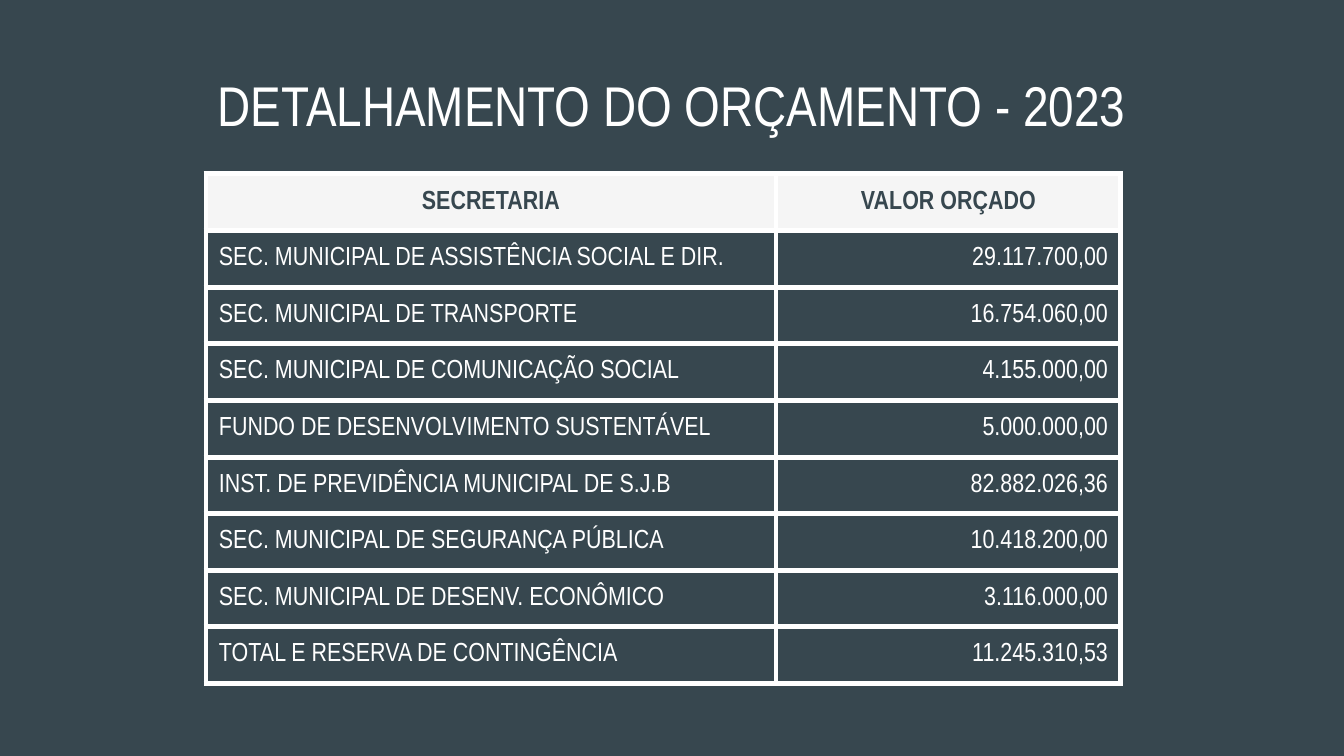
from lxml import etree
from pptx import Presentation
from pptx.dml.color import RGBColor
from pptx.enum.text import MSO_ANCHOR, PP_ALIGN
from pptx.oxml.ns import qn
from pptx.util import Pt

LEFT, CENTER, RIGHT = PP_ALIGN.LEFT, PP_ALIGN.CENTER, PP_ALIGN.RIGHT
TOP, MIDDLE = MSO_ANCHOR.TOP, MSO_ANCHOR.MIDDLE

TITLE = "DETALHAMENTO DO ORÇAMENTO - 2023"
HEADER = ("SECRETARIA", "VALOR ORÇADO")
BUDGET = [
    ("SEC. MUNICIPAL DE ASSISTÊNCIA SOCIAL E DIR.", "29.117.700,00"),
    ("SEC. MUNICIPAL DE TRANSPORTE", "16.754.060,00"),
    ("SEC. MUNICIPAL DE COMUNICAÇÃO SOCIAL", "4.155.000,00"),
    ("FUNDO DE DESENVOLVIMENTO SUSTENTÁVEL", "5.000.000,00"),
    ("INST. DE PREVIDÊNCIA MUNICIPAL DE S.J.B", "82.882.026,36"),
    ("SEC. MUNICIPAL DE SEGURANÇA PÚBLICA", "10.418.200,00"),
    ("SEC. MUNICIPAL DE DESENV. ECONÔMICO", "3.116.000,00"),
    ("TOTAL E RESERVA DE CONTINGÊNCIA", "11.245.310,53"),
]
COLORS = {"slate": "37474F", "white": "FFFFFF", "header": "F5F5F5"}
FONT = "Arial Narrow"
SLIDE_SIZE = (1344, 756)
TITLE_BOX = (46, 58, 1252, 85)
TABLE_BOX = (206, 174, 915, 510)
COLUMN_WIDTHS = (570, 345)
BORDER = Pt(3)


def px(length):
    return round(length * 914400 / 134.4)


def color(name):
    return RGBColor.from_string(COLORS[name])


def write(frame, text, size, ink, align, bold=False):
    para = frame.paragraphs[0]
    para.alignment = align
    span = para.add_run()
    span.text = text
    span.font.name = FONT
    span.font.size = Pt(size)
    span.font.bold = bold
    span.font.color.rgb = color(ink)


def add_borders(cell):
    properties = cell._tc.get_or_add_tcPr()
    for index, side in enumerate(("a:lnL", "a:lnR", "a:lnT", "a:lnB")):
        line = etree.Element(qn(side), w=str(BORDER))
        fill = etree.SubElement(line, qn("a:solidFill"))
        etree.SubElement(fill, qn("a:srgbClr"), val=COLORS["white"])
        properties.insert(index, line)


def add_title(slide):
    title = slide.shapes.title
    title.left, title.top, title.width, title.height = map(px, TITLE_BOX)
    frame = title.text_frame
    frame.vertical_anchor = TOP
    frame.margin_left = frame.margin_right = px(13)
    frame.margin_top = frame.margin_bottom = px(13)
    write(frame, TITLE, 30, "white", CENTER)


def add_budget_table(slide):
    rows = [HEADER] + BUDGET
    table = slide.shapes.add_table(len(rows), len(HEADER), *map(px, TABLE_BOX)).table
    table.horz_banding = False
    for column, width in zip(table.columns, COLUMN_WIDTHS):
        column.width = px(width)
    for r, values in enumerate(rows):
        table.rows[r].height = px(TABLE_BOX[3] / len(rows))
        for c, value in enumerate(values):
            cell = table.cell(r, c)
            cell.vertical_anchor = MIDDLE
            cell.margin_left = cell.margin_right = px(13)
            cell.margin_top = cell.margin_bottom = px(13)
            if r == 0:
                cell.fill.solid()
                cell.fill.fore_color.rgb = color("header")
                write(cell.text_frame, value, 14, "slate", CENTER, bold=True)
            else:
                cell.fill.background()
                write(cell.text_frame, value, 14, "white", (LEFT, RIGHT)[c])
            add_borders(cell)


def main():
    deck = Presentation()
    deck.slide_width, deck.slide_height = map(px, SLIDE_SIZE)
    slide = deck.slides.add_slide(deck.slide_layouts[5])
    slide.background.fill.solid()
    slide.background.fill.fore_color.rgb = color("slate")
    add_title(slide)
    add_budget_table(slide)
    deck.save("out.pptx")


if __name__ == "__main__":
    main()
